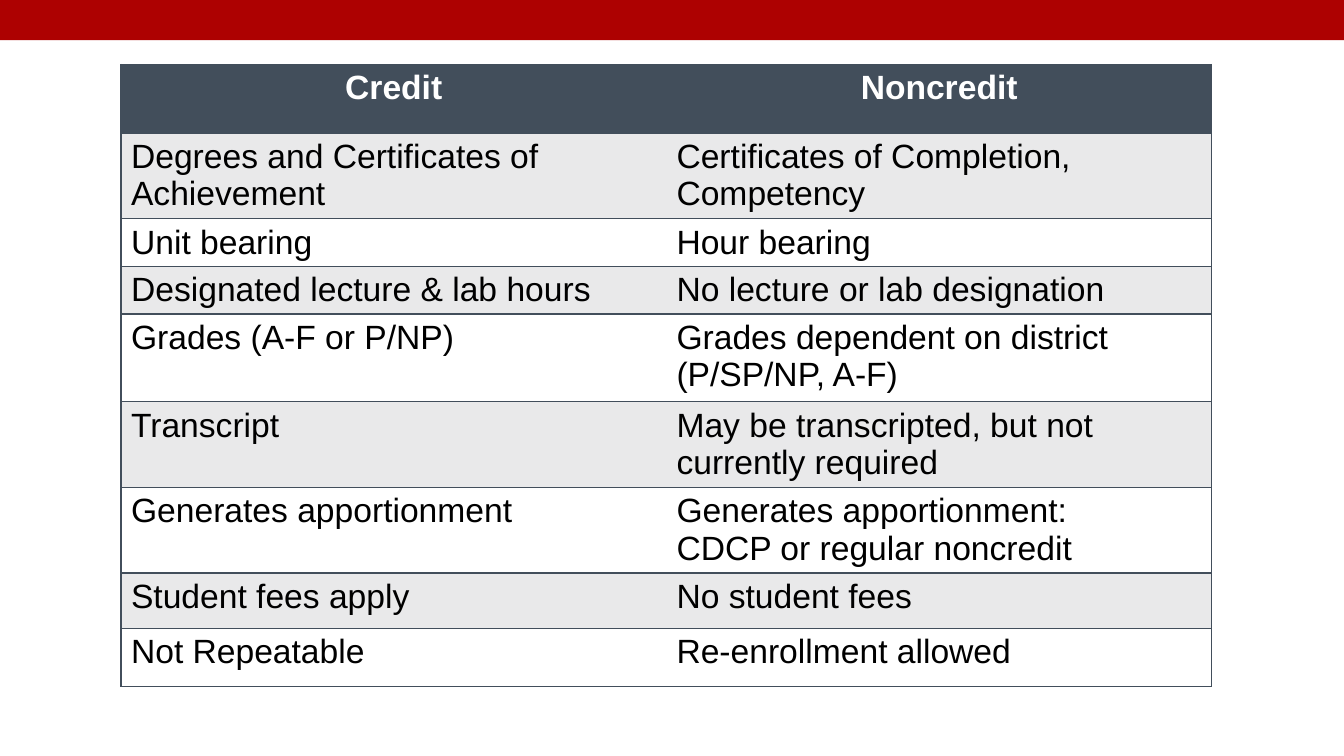
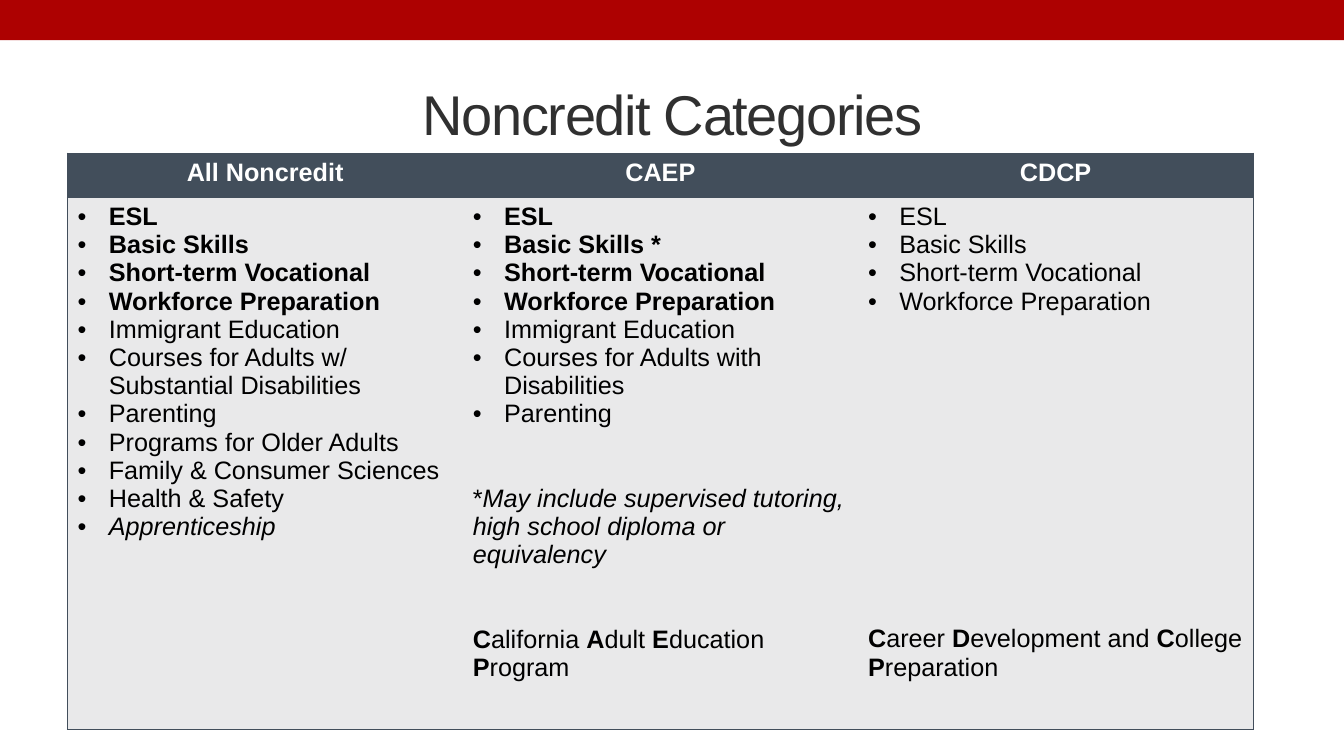
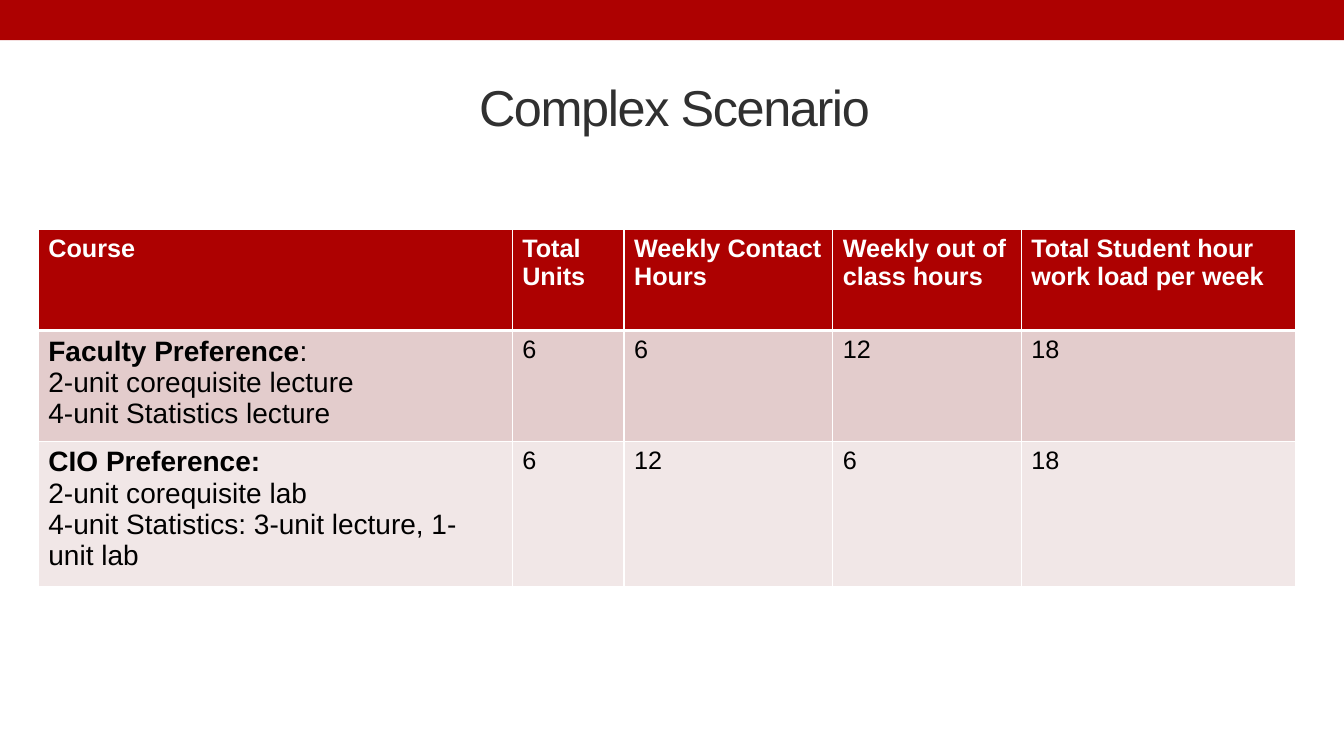
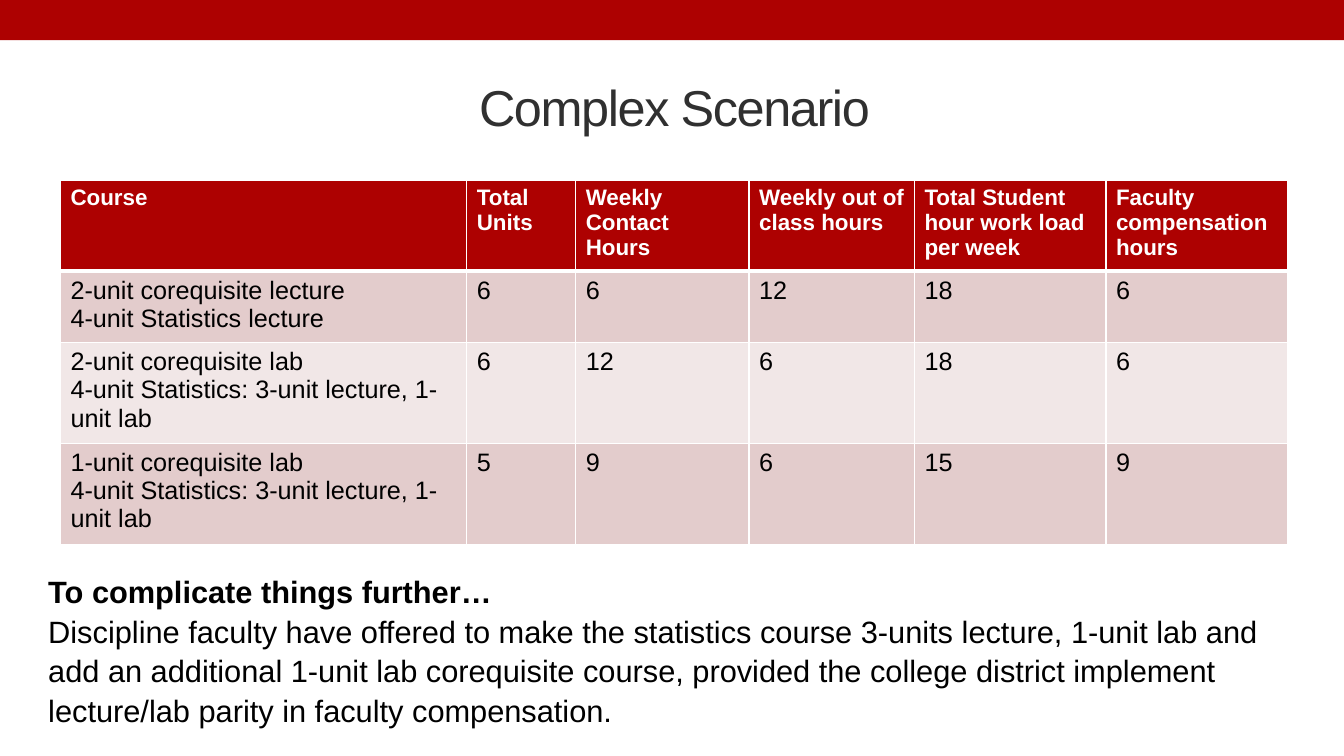
from dataclasses import dataclass
from itertools import groupby
from typing import NamedTuple

from lxml import etree
from pptx import Presentation
from pptx import util as u
from pptx.dml.color import RGBColor
from pptx.enum import shapes, text
from pptx.oxml.ns import qn

PX = 9144  # EMU, 100 px to the inch
PAGE_WIDTH, PAGE_HEIGHT = 1333, 750
FONT = "Arial"
RED, SLATE, INK = "AD0101", "424E5B", "303030"
GREY, ROSE, PALE_ROSE = "E9E9EA", "E3CCCC", "F1E7E7"
WHITE, BLACK = "FFFFFF", "000000"
LINE_HEIGHT = 1.117  # of the text size
LEFT, CENTER = text.PP_ALIGN.LEFT, text.PP_ALIGN.CENTER


class Box(NamedTuple):
    left: int
    top: int
    width: int
    height: int


class Span(NamedTuple):
    text: str
    bold: bool = False
    italic: bool = False


class Para(NamedTuple):
    spans: list[Span]
    bullet: bool = False
    lines_before: int = 0


class Cell(NamedTuple):
    paras: list[Para]
    size: int


@dataclass(frozen=True)
class TableStyle:
    header_fill: str
    bands: tuple[str, str]
    line: str
    column_lines: bool
    header_rule: int
    header_align: text.PP_ALIGN


SLATE_STYLE = TableStyle(SLATE, (GREY, WHITE), SLATE, False, 1, CENTER)
RED_STYLE = TableStyle(RED, (ROSE, PALE_ROSE), WHITE, True, 3, LEFT)


def px(length: int) -> u.Emu:
    return u.Emu(length * PX)


def emu_box(box: Box) -> list[u.Emu]:
    return [px(length) for length in box]


def color(value: str) -> RGBColor:
    return RGBColor.from_string(value)


def plain(*lines: str, bold: bool = False, italic: bool = False,
          bullet: bool = False) -> list[Para]:
    return [Para([Span(line, bold, italic)], bullet) for line in lines]


def initials(phrase: str, lines_before: int) -> Para:
    """Set the capitals of the phrase in bold."""
    spans = [Span("".join(letters), bold)
             for bold, letters in groupby(phrase, str.isupper)]
    return Para(spans, lines_before=lines_before)


def write_text(frame, paras: list[Para], *, size: int, ink: str = BLACK,
               align: text.PP_ALIGN = LEFT, tracking: int = 0,
               line_spacing: float = 1.0) -> None:
    frame.word_wrap = True
    for index, item in enumerate(paras):
        para = frame.paragraphs[0] if index == 0 else frame.add_paragraph()
        para.alignment = align
        para.line_spacing = line_spacing
        if item.lines_before:
            para.space_before = u.Pt(item.lines_before * size * LINE_HEIGHT)
        if item.bullet:
            add_bullet(para)
        for part in item.spans:
            span = para.add_run()
            span.text = part.text
            span.font.name = FONT
            span.font.size = u.Pt(size)
            span.font.bold = part.bold
            span.font.italic = part.italic
            span.font.color.rgb = color(ink)
            if tracking:
                span._r.get_or_add_rPr().set("spc", str(tracking * 100))


def add_bullet(para) -> None:
    properties = para._p.get_or_add_pPr()
    properties.set("marL", str(px(31)))
    properties.set("indent", str(px(-31)))
    etree.SubElement(properties, qn("a:buFont")).set("typeface", FONT)
    etree.SubElement(properties, qn("a:buChar")).set("char", "•")


def add_border(cell, side: str, value: str, width: int) -> None:
    """Draw one side (L, R, T or B); a width of 0 hides it."""
    line = etree.SubElement(cell._tc.get_or_add_tcPr(), qn(f"a:ln{side}"))
    line.set("w", str(u.Pt(width)))
    if width:
        fill = etree.SubElement(line, qn("a:solidFill"))
        etree.SubElement(fill, qn("a:srgbClr")).set("val", value)
    else:
        etree.SubElement(line, qn("a:noFill"))


def add_page(deck):
    page = deck.slides.add_slide(deck.slide_layouts[6])
    band = page.shapes.add_shape(shapes.MSO_SHAPE.RECTANGLE,
                                 *emu_box(Box(0, 0, PAGE_WIDTH, 40)))
    band.shadow.inherit = False
    band.fill.solid()
    band.fill.fore_color.rgb = color(RED)
    band.line.fill.background()
    return page


def add_title(page, title: str, box: Box, size: int) -> None:
    frame = page.shapes.add_textbox(*emu_box(box)).text_frame
    frame.vertical_anchor = text.MSO_ANCHOR.MIDDLE
    write_text(frame, plain(title), size=size, ink=INK, align=CENTER,
               tracking=-1)


def add_table(page, left: int, top: int, columns: list[int],
              heights: list[int], header: list[str], header_size: int,
              body: list[list[Cell]], style: TableStyle) -> None:
    box = Box(left, top, sum(columns), sum(heights))
    table = page.shapes.add_table(len(heights), len(columns),
                                  *emu_box(box)).table
    for column, width in zip(table.columns, columns):
        column.width = px(width)
    for row, height in zip(table.rows, heights):
        row.height = px(height)

    header_cells = [Cell(plain(label, bold=True), header_size)
                    for label in header]
    last_column = len(columns) - 1
    for row, contents in enumerate([header_cells, *body]):
        is_header = row == 0
        for column, content in enumerate(contents):
            cell = table.cell(row, column)
            widths = {
                "L": int(style.column_lines or column == 0),
                "R": int(style.column_lines or column == last_column),
                "T": style.header_rule if row == 1 else 1,
                "B": style.header_rule if is_header else 1,
            }
            for side, width in widths.items():
                add_border(cell, side, style.line, width)
            cell.fill.solid()
            cell.fill.fore_color.rgb = color(
                style.header_fill if is_header else style.bands[(row - 1) % 2])
            write_text(cell.text_frame, content.paras, size=content.size,
                       ink=WHITE if is_header else BLACK,
                       align=style.header_align if is_header else LEFT)


def add_comparison(deck) -> None:
    pairs = [
        ("Degrees and Certificates of Achievement",
         "Certificates of Completion, Competency"),
        ("Unit bearing", "Hour bearing"),
        ("Designated lecture & lab hours", "No lecture or lab designation"),
        ("Grades (A-F or P/NP)",
         "Grades dependent on district (P/SP/NP, A-F)"),
        ("Transcript", "May be transcripted, but not currently required"),
        ("Generates apportionment",
         "Generates apportionment:\nCDCP or regular noncredit"),
        ("Student fees apply", "No student fees"),
        ("Not Repeatable", "Re-enrollment allowed"),
    ]
    body = [[Cell(plain(*entry.split("\n")), 24) for entry in pair]
            for pair in pairs]
    add_table(add_page(deck), 120, 64, [541, 541],
              [68, 85, 47, 47, 87, 85, 85, 55, 58],
              ["Credit", "Noncredit"], 24, body, SLATE_STYLE)


def add_categories(deck) -> None:
    page = add_page(deck)
    add_title(page, "Noncredit Categories", Box(67, 58, 1200, 108), 40)
    vocational = ["Short-term Vocational", "Workforce Preparation"]
    everything = [
        *plain("ESL", "Basic Skills", *vocational, bold=True, bullet=True),
        *plain("Immigrant Education",
               "Courses for Adults w/ Substantial Disabilities", "Parenting",
               "Programs for Older Adults", "Family & Consumer Sciences",
               "Health & Safety", bullet=True),
        *plain("Apprenticeship", italic=True, bullet=True),
    ]
    note = ("May include supervised tutoring, high school diploma or "
            "equivalency")
    adult = [
        *plain("ESL", "Basic Skills *", *vocational, bold=True, bullet=True),
        *plain("Immigrant Education", "Courses for Adults with Disabilities",
               "Parenting", bullet=True),
        Para([Span("*"), Span(note, italic=True)], lines_before=2),
        initials("California Adult Education Program", 2),
    ]
    career = [
        *plain("ESL", "Basic Skills", *vocational, bullet=True),
        initials("Career Development and College Preparation", 11),
    ]
    body = [[Cell(paras, 18) for paras in (everything, adult, career)]]
    add_table(page, 67, 152, [392] * 3, [44, 528],
              ["All Noncredit", "CAEP", "CDCP"], 18, body, SLATE_STYLE)


def add_scenario(deck, left: int, top: int, columns: list[int],
                 heights: list[int], extra_header: list[str],
                 header_size: int, course_size: int,
                 courses: list[tuple[list[Para], list[int]]]):
    page = add_page(deck)
    add_title(page, "Complex Scenario", Box(248, 74, 842, 63), 36)
    header = ["Course", "Total Units", "Weekly Contact Hours",
              "Weekly out of class hours",
              "Total Student hour work load per week", *extra_header]
    body = [[Cell(course, course_size),
             *(Cell(plain(str(value)), 18) for value in values)]
            for course, values in courses]
    add_table(page, left, top, columns, heights, header, header_size, body,
              RED_STYLE)
    return page


def add_scenarios(deck) -> None:
    lecture = plain("2-unit corequisite lecture", "4-unit Statistics lecture")
    split_course = "4-unit Statistics: 3-unit lecture, 1-unit lab"
    lab = plain("2-unit corequisite lab", split_course)
    short_lab = plain("1-unit corequisite lab", split_course)

    faculty = Para([Span("Faculty Preference", bold=True), Span(":")])
    officer = Para([Span("CIO Preference:", bold=True)])
    add_scenario(deck, 38, 228, [470, 111, 207, 187, 272], [100, 103, 134],
                 [], 18, 20,
                 [([faculty, *lecture], [6, 6, 12, 18]),
                  ([officer, *lab], [6, 12, 6, 18])])

    page = add_scenario(deck, 60, 179, [403, 108, 172, 164, 190, 180],
                        [89, 71, 100, 100], ["Faculty compensation hours"],
                        16, 18,
                        [(lecture, [6, 6, 12, 18, 6]),
                         (lab, [6, 12, 6, 18, 6]),
                         (short_lab, [5, 9, 6, 15, 9])])
    frame = page.shapes.add_textbox(*emu_box(Box(38, 561, 1262, 160))).text_frame
    closing = [
        *plain("To complicate things further…", bold=True),
        *plain("Discipline faculty have offered to make the statistics course "
               "3-units lecture, 1-unit lab and add an additional 1-unit lab "
               "corequisite course, provided the college district implement "
               "lecture/lab parity in faculty compensation."),
    ]
    write_text(frame, closing, size=22, line_spacing=1.07)


def main() -> None:
    deck = Presentation()
    deck.slide_width, deck.slide_height = px(PAGE_WIDTH), px(PAGE_HEIGHT)
    add_comparison(deck)
    add_categories(deck)
    add_scenarios(deck)
    deck.save("out.pptx")


if __name__ == "__main__":
    main()
